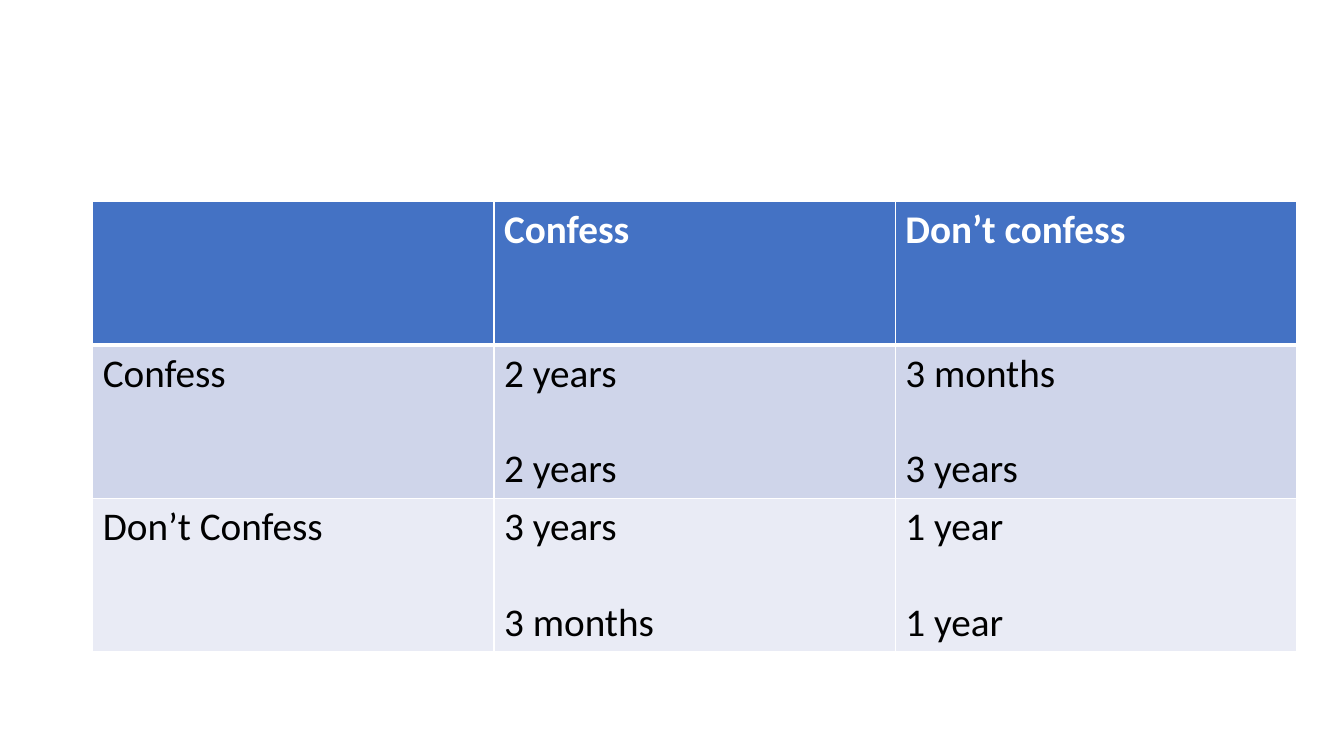
from lxml import etree
from pptx import Presentation
from pptx import util as u
from pptx.dml.color import RGBColor
from pptx.oxml import ns


def color(hex_string):
    return RGBColor.from_string(hex_string)


class SlideBuilder:
    font = "Calibri"
    text_size = 28
    paragraph_gap = 34
    border_color = "FFFFFF"

    def __init__(self, slide):
        self.slide = slide

    def add_border(self, cell, side, width):
        properties = cell._tc.get_or_add_tcPr()
        line = etree.SubElement(properties, ns.qn(f"a:ln{side}"), w=str(u.Pt(width)))
        fill = etree.SubElement(line, ns.qn("a:solidFill"))
        etree.SubElement(fill, ns.qn("a:srgbClr"), val=self.border_color)

    def fill_cell(self, cell, lines, fill, text_color, bold):
        cell.fill.solid()
        cell.fill.fore_color.rgb = color(fill)
        frame = cell.text_frame
        for index, line in enumerate(lines):
            paragraph = frame.add_paragraph() if index else frame.paragraphs[0]
            if index:
                paragraph.space_before = u.Pt(self.paragraph_gap)
            run = paragraph.add_run()
            run.text = line
            run.font.name = self.font
            run.font.size = u.Pt(self.text_size)
            run.font.bold = bold
            run.font.color.rgb = color(text_color)

    def add_table(self, left, top, column_width, row_heights, rows, fills):
        column_count = len(rows[0])
        table = self.slide.shapes.add_table(
            len(rows), column_count, u.Inches(left), u.Inches(top),
            u.Inches(column_width * column_count), u.Inches(sum(row_heights)),
        ).table
        for column in table.columns:
            column.width = u.Inches(column_width)
        for row_index, cells in enumerate(rows):
            table.rows[row_index].height = u.Inches(row_heights[row_index])
            header = row_index == 0
            # The rule below the header is thicker than the others
            widths = {"L": 1, "R": 1, "T": 3 if row_index == 1 else 1, "B": 3 if header else 1}
            for column_index, lines in enumerate(cells):
                cell = table.cell(row_index, column_index)
                for side, width in widths.items():
                    self.add_border(cell, side, width)
                self.fill_cell(cell, lines, fills[row_index],
                               "FFFFFF" if header else "000000", header)


def main():
    presentation = Presentation()
    presentation.slide_width = u.Inches(13.33)
    presentation.slide_height = u.Inches(7.5)
    slide = presentation.slides.add_slide(presentation.slide_layouts[6])
    builder = SlideBuilder(slide)

    # Payoff table: each outcome lists both sentences
    payoffs = [
        [[], ["Confess"], ["Don’t confess"]],
        [["Confess"], ["2 years", "2 years"], ["3 months", "3 years"]],
        [["Don’t Confess"], ["3 years", "3 months"], ["1 year", "1 year"]],
    ]
    builder.add_table(0.92, 2, 3.98, [1.42, 1.52, 1.52], payoffs,
                      ["4472C4", "CFD5EA", "E9EBF5"])

    presentation.save("out.pptx")


if __name__ == "__main__":
    main()
